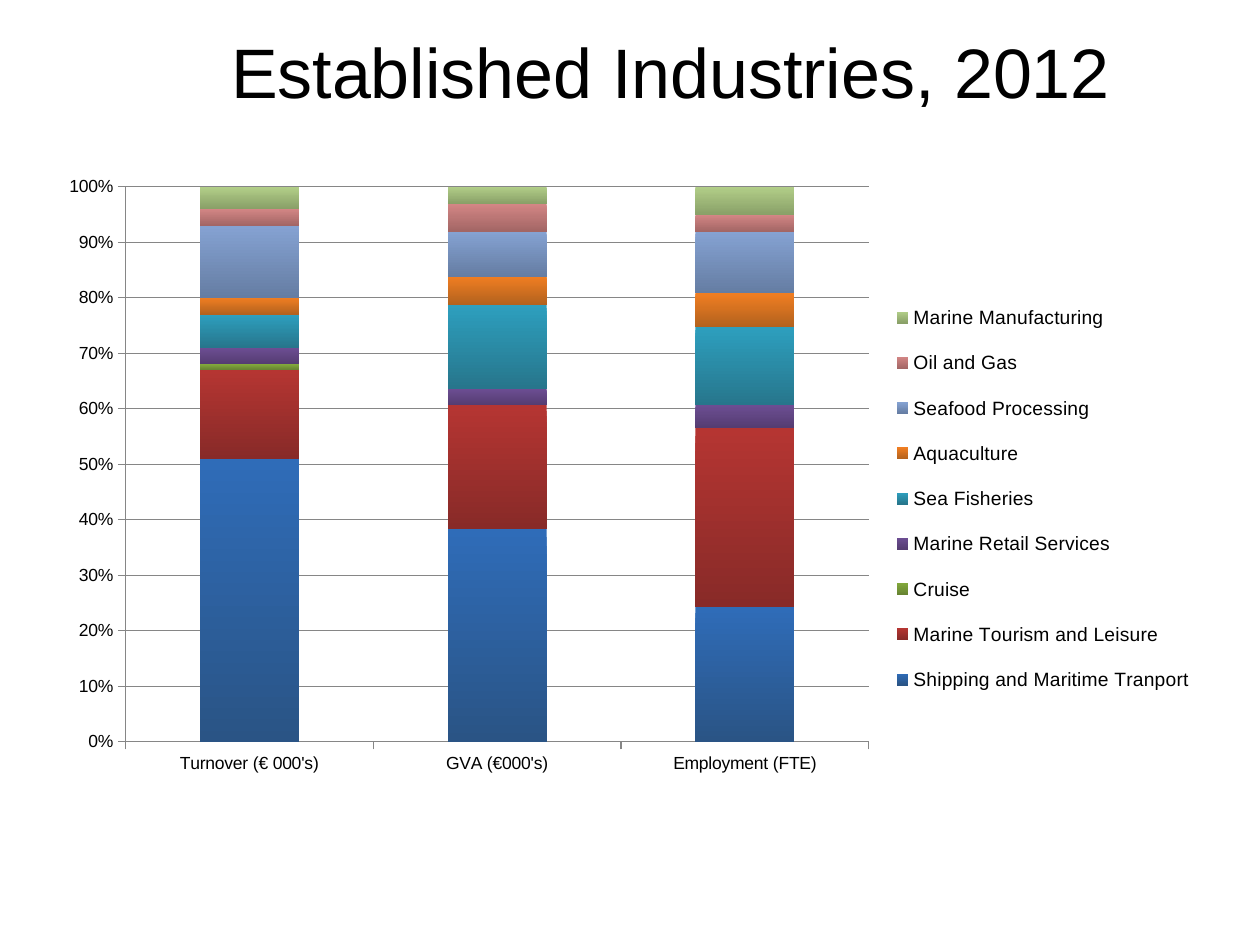
from lxml import etree
from pptx import Presentation
from pptx.chart.data import CategoryChartData
from pptx.dml.color import RGBColor
from pptx.enum.chart import XL_CHART_TYPE, XL_LEGEND_POSITION, XL_TICK_MARK
from pptx.enum.text import MSO_ANCHOR, PP_ALIGN
from pptx.oxml.ns import qn
from pptx.util import Inches, Pt

STACKED = XL_CHART_TYPE.COLUMN_STACKED_100
RIGHT = XL_LEGEND_POSITION.RIGHT
OUTSIDE = XL_TICK_MARK.OUTSIDE
MIDDLE = MSO_ANCHOR.MIDDLE
CENTER = PP_ALIGN.CENTER

BLACK = RGBColor(0x00, 0x00, 0x00)
GRAY = RGBColor(0x86, 0x86, 0x86)
BLUE = RGBColor(0x2F, 0x6C, 0xB8), RGBColor(0x2A, 0x54, 0x85)
RED = RGBColor(0xB5, 0x35, 0x32), RGBColor(0x88, 0x2A, 0x28)
GREEN = RGBColor(0x82, 0xA8, 0x3C), RGBColor(0x67, 0x84, 0x32)
PURPLE = RGBColor(0x6C, 0x4D, 0x92), RGBColor(0x55, 0x3D, 0x72)
TEAL = RGBColor(0x2D, 0x9F, 0xBE), RGBColor(0x27, 0x76, 0x8C)
ORANGE = RGBColor(0xF0, 0x7E, 0x22), RGBColor(0xB3, 0x62, 0x1E)
LIGHT_BLUE = RGBColor(0x85, 0xA2, 0xD2), RGBColor(0x65, 0x7D, 0xA3)
LIGHT_RED = RGBColor(0xD3, 0x86, 0x85), RGBColor(0xA3, 0x66, 0x65)
LIGHT_GREEN = RGBColor(0xB2, 0xCE, 0x88), RGBColor(0x89, 0xA0, 0x68)

FONT = "Arial"
TITLE = "Established Industries, 2012"
CATEGORIES = ["Turnover (€ 000's)", "GVA (€000's)", "Employment (FTE)"]
INDUSTRIES = [
    ("Shipping and Maritime Tranport", (51, 38, 24), BLUE),
    ("Marine Tourism and Leisure", (16, 22, 32), RED),
    ("Cruise", (1, 0, 0), GREEN),
    ("Marine Retail Services", (3, 3, 4), PURPLE),
    ("Sea Fisheries", (6, 15, 14), TEAL),
    ("Aquaculture", (3, 5, 6), ORANGE),
    ("Seafood Processing", (13, 8, 11), LIGHT_BLUE),
    ("Oil and Gas", (3, 5, 3), LIGHT_RED),
    ("Marine Manufacturing", (4, 3, 5), LIGHT_GREEN),
]
PLOT_AREA = {"x": 0.07, "y": 0.035, "w": 0.64, "h": 0.89}
LEGEND_AREA = {"x": 0.73, "y": 0.19, "w": 0.26, "h": 0.69}


def set_font(font, size):
    font.name = FONT
    font.size = Pt(size)
    font.color.rgb = BLACK


def make_layout(area, inner=False):
    layout = etree.Element(qn("c:layout"))
    manual = etree.SubElement(layout, qn("c:manualLayout"))
    settings = [("layoutTarget", "inner")] if inner else []
    settings += [("xMode", "edge"), ("yMode", "edge"), *area.items()]
    for name, value in settings:
        etree.SubElement(manual, qn(f"c:{name}")).set("val", str(value))
    return layout


def add_title(slide):
    title = slide.shapes.title
    title.left, title.top = Inches(1.14), Inches(0.05)
    title.width, title.height = Inches(8.36), Inches(1.02)
    title.text_frame.text = TITLE
    title.text_frame.vertical_anchor = MIDDLE
    paragraph = title.text_frame.paragraphs[0]
    paragraph.alignment = CENTER
    set_font(paragraph.runs[0].font, 40)


def add_industry_chart(slide):
    data = CategoryChartData(number_format="General")
    data.categories = CATEGORIES
    for name, values, _ in INDUSTRIES:
        data.add_series(name, values)
    chart = slide.shapes.add_chart(
        STACKED, Inches(0.35), Inches(1.31), Inches(9.22), Inches(4.95), data
    ).chart
    set_font(chart.font, 10)
    chart.has_title = False

    plot = chart.plots[0]
    plot.gap_width, plot.overlap = 150, 100
    plot.vary_by_categories = False
    for series, (_, _, shades) in zip(plot.series, INDUSTRIES):
        fill = series.format.fill
        fill.gradient()
        fill.gradient_angle = 270
        for stop, shade in zip(fill.gradient_stops, shades):
            stop.color.rgb = shade

    value_axis = chart.value_axis
    value_axis.minimum_scale, value_axis.maximum_scale = 0, 1
    value_axis.major_unit = 0.1
    value_axis.has_major_gridlines = True
    value_axis.tick_labels.number_format = "0%"
    value_axis.tick_labels.number_format_is_linked = False
    value_axis.major_gridlines.format.line.color.rgb = GRAY
    for axis in (value_axis, chart.category_axis):
        axis.major_tick_mark = OUTSIDE
        axis.format.line.color.rgb = GRAY

    chart.has_legend = True
    legend = chart.legend
    legend.position = RIGHT
    legend.include_in_layout = False
    set_font(legend.font, 11)

    plot_area = chart.element.find(f".//{qn('c:plotArea')}")
    for layout in plot_area.findall(qn("c:layout")):
        plot_area.remove(layout)
    plot_area.insert(0, make_layout(PLOT_AREA, inner=True))
    legend_element = chart.element.find(f".//{qn('c:legend')}")
    for layout in legend_element.findall(qn("c:layout")):
        legend_element.remove(layout)
    legend_element.find(qn("c:legendPos")).addnext(make_layout(LEGEND_AREA))


def main():
    presentation = Presentation()
    presentation.slide_width, presentation.slide_height = Inches(10), Inches(7.5)
    slide = presentation.slides.add_slide(presentation.slide_layouts[5])
    add_title(slide)
    add_industry_chart(slide)
    presentation.save("out.pptx")


if __name__ == "__main__":
    main()
